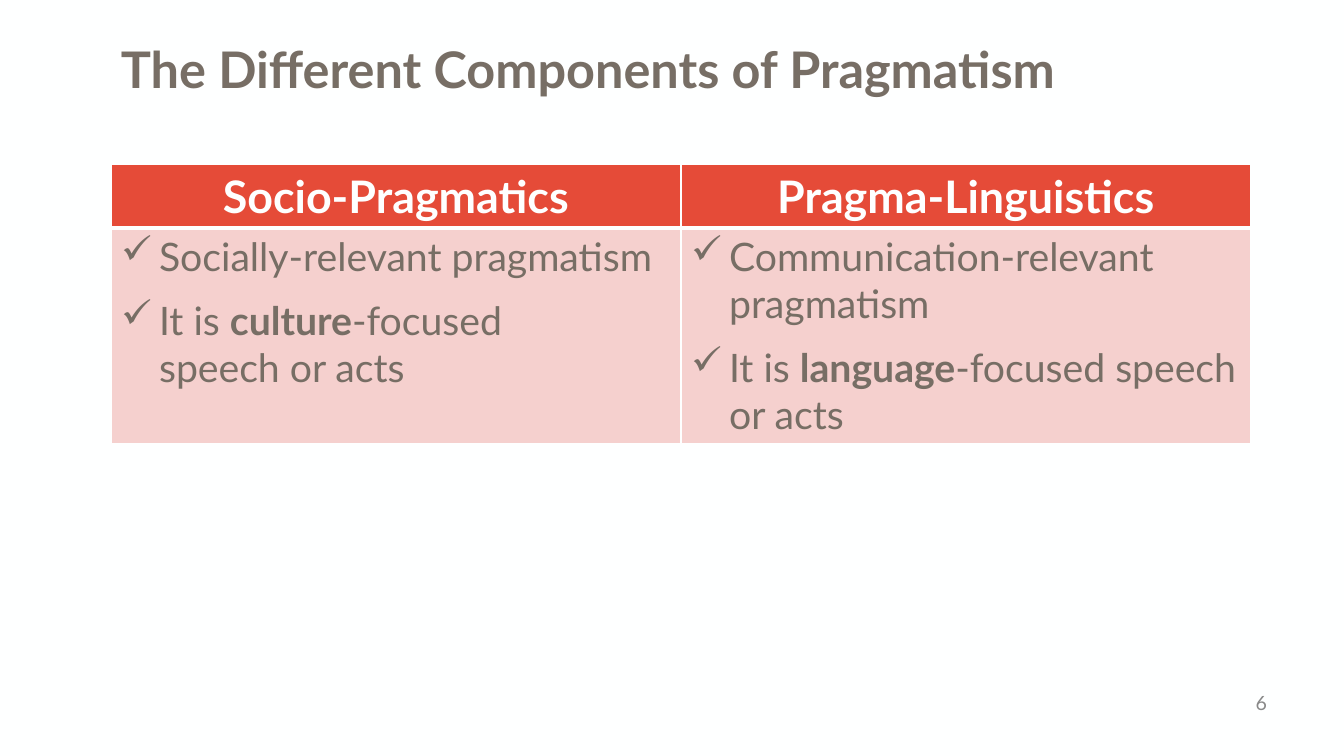
from lxml.etree import SubElement
from pptx import Presentation
from pptx.dml.color import RGBColor
from pptx.enum.text import MSO_ANCHOR as Anchor, PP_ALIGN as Align
from pptx.oxml.ns import qn
from pptx.util import Emu, Pt

TITLE = "The Different Components of Pragmatism"
PAGE_NUMBER = "6"
# Each bullet is a list of lines, each line a list of (words, bold) pieces.
COMPONENTS = [
    ("Socio-Pragmatics", [
        [[("Socially-relevant pragmatism", False)]],
        [[("It is ", False), ("culture", True), ("-focused", False)],
         [("speech or acts", False)]],
    ]),
    ("Pragma-Linguistics", [
        [[("Communication-relevant pragmatism", False)]],
        [[("It is ", False), ("language", True), ("-focused speech or acts", False)]],
    ]),
]

COLORS = {"paper": "FEFFFF", "text": "776E65", "header": "E54B38",
          "body": "F5D0CE", "number": "898989"}
FONT = "Lato"
SLIDE_W, SLIDE_H = 1344, 756
TITLE_BOX = (111, 40, 1141, 81)
NUMBER_BOX = (1211, 683, 66, 40)
TABLE_LEFT, TABLE_TOP, COLUMN_W = 111, 164, 570
HEADER_H, BODY_H = 63, 215
BULLET_INDENT = 38
GAP = Pt(6)
THIN, THICK = Pt(1), Pt(3)
SCALE = 12192000 / SLIDE_W


def px(length):
    return Emu(round(length * SCALE))


def color(name):
    return RGBColor.from_string(COLORS[name])


def add_words(paragraph, words, size, tone, bold=False):
    run = paragraph.add_run()
    run.text = words
    for key, value in {"name": FONT, "size": Pt(size), "bold": bold}.items():
        setattr(run.font, key, value)
    run.font.color.rgb = color(tone)


def add_label(box, words, size, tone, frame_format, paragraph_format, bold=False):
    frame = slide.shapes.add_textbox(*map(px, box)).text_frame
    for key, value in frame_format.items():
        setattr(frame, key, value)
    for key, value in paragraph_format.items():
        setattr(frame.paragraphs[0], key, value)
    add_words(frame.paragraphs[0], words, size, tone, bold)


def style_cell(cell, fill, top, bottom):
    """Draw the cell's four borders and fill it."""
    properties = cell._tc.get_or_add_tcPr()
    for side, width in {"lnL": THIN, "lnR": THIN, "lnT": top, "lnB": bottom}.items():
        border = SubElement(properties, qn(f"a:{side}"), w=str(width))
        solid = SubElement(border, qn("a:solidFill"))
        SubElement(solid, qn("a:srgbClr"), val=COLORS["paper"])
    cell.fill.solid()
    cell.fill.fore_color.rgb = color(fill)


def add_check_mark(paragraph):
    properties = paragraph._p.get_or_add_pPr()
    properties.set("marL", str(px(BULLET_INDENT)))
    properties.set("indent", str(-px(BULLET_INDENT)))
    SubElement(properties, qn("a:buChar"), char="✓")


def fill_bullets(frame, bullets):
    for index, lines in enumerate(bullets):
        paragraph = frame.add_paragraph() if index else frame.paragraphs[0]
        add_check_mark(paragraph)
        paragraph.space_after = GAP
        if index:
            paragraph.space_before = GAP
        for number, pieces in enumerate(lines):
            if number:
                paragraph.add_line_break()
            for words, bold in pieces:
                add_words(paragraph, words, 28, "text", bold)


deck = Presentation()
deck.slide_width, deck.slide_height = px(SLIDE_W), px(SLIDE_H)
slide = deck.slides.add_slide(deck.slide_layouts[6])
slide.background.fill.solid()
slide.background.fill.fore_color.rgb = color("paper")

add_label(NUMBER_BOX, PAGE_NUMBER, 14, "number",
          {"word_wrap": True, "vertical_anchor": Anchor.MIDDLE},
          {"alignment": Align.RIGHT})
add_label(TITLE_BOX, TITLE, 36, "text", {"word_wrap": True},
          {"line_spacing": 0.9}, bold=True)

table = slide.shapes.add_table(
    2, len(COMPONENTS), px(TABLE_LEFT), px(TABLE_TOP),
    px(COLUMN_W * len(COMPONENTS)), px(HEADER_H + BODY_H)).table
for row, height in zip(table.rows, (HEADER_H, BODY_H)):
    row.height = px(height)
for column, (heading, bullets) in enumerate(COMPONENTS):
    table.columns[column].width = px(COLUMN_W)
    header, body = table.cell(0, column), table.cell(1, column)
    style_cell(header, "header", THIN, THICK)
    style_cell(body, "body", THICK, THIN)
    heading_line = header.text_frame.paragraphs[0]
    heading_line.alignment = Align.CENTER
    heading_line.space_after = GAP
    add_words(heading_line, heading, 32, "paper", bold=True)
    fill_bullets(body.text_frame, bullets)

deck.save("out.pptx")
